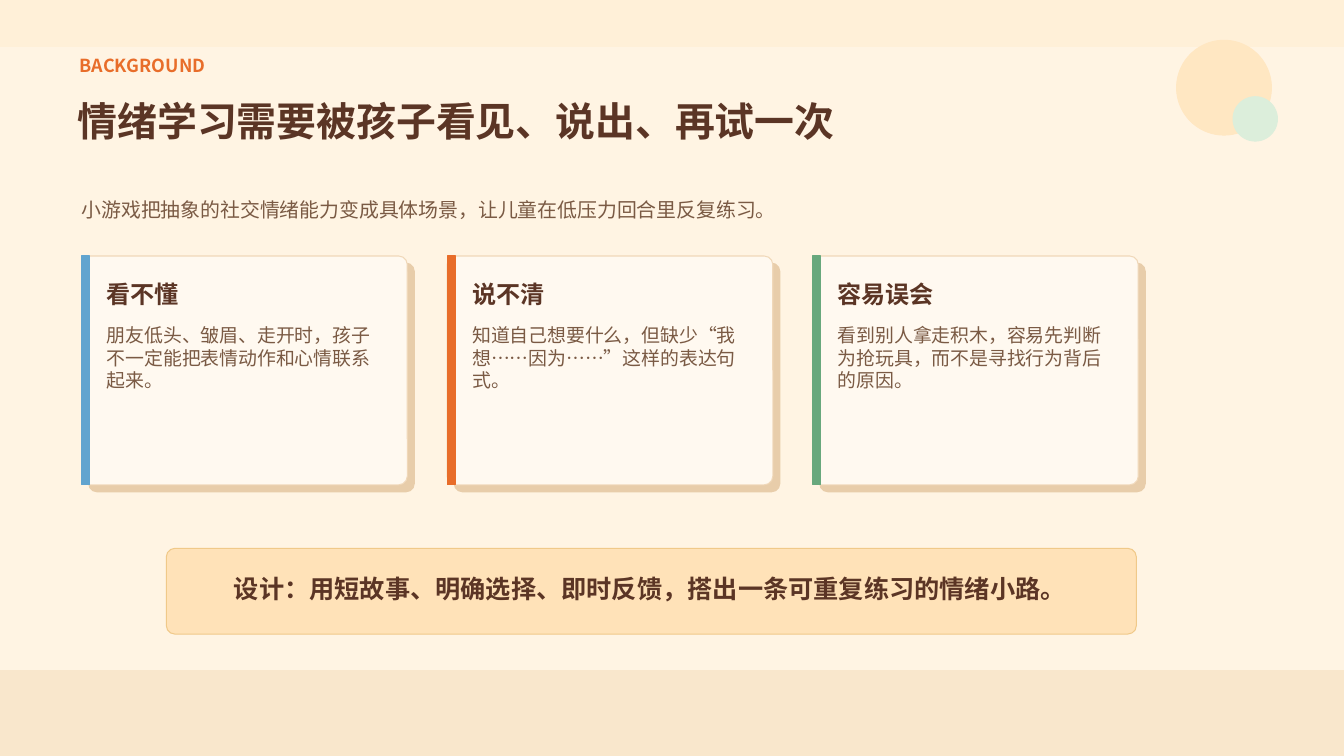
from dataclasses import dataclass

import pptx
import pptx.dml.color
import pptx.enum.shapes
import pptx.enum.text
import pptx.presentation
import pptx.shapes.autoshape
import pptx.slide
import pptx.util

Inches = pptx.util.Inches
RGBColor = pptx.dml.color.RGBColor
Shape = pptx.shapes.autoshape.Shape
Slide = pptx.slide.Slide
Kind = pptx.enum.shapes.MSO_SHAPE
Align = pptx.enum.text.PP_ALIGN

FONT = "Noto Sans CJK SC"
CREAM = RGBColor(0xFF, 0xF4, 0xE3)
TOP_BAND = RGBColor(0xFF, 0xF0, 0xD8)
BOTTOM_BAND = RGBColor(0xF9, 0xE7, 0xCC)
PEACH = RGBColor(0xFF, 0xE7, 0xC2)
MINT = RGBColor(0xDC, 0xEE, 0xDB)
BROWN = RGBColor(0x5B, 0x35, 0x25)
SOFT_BROWN = RGBColor(0x7A, 0x5A, 0x44)
CARD_SHADE = RGBColor(0xE8, 0xCD, 0xAA)
CARD_FILL = RGBColor(0xFF, 0xF9, 0xF0)
CARD_LINE = RGBColor(0xF0, 0xD8, 0xB9)
BLUE = RGBColor(0x61, 0xA4, 0xCF)
ORANGE = RGBColor(0xE8, 0x6D, 0x2A)
GREEN = RGBColor(0x68, 0xA8, 0x7D)
BANNER_FILL = RGBColor(0xFF, 0xE2, 0xB8)
BANNER_LINE = RGBColor(0xF0, 0xC9, 0x89)

CARD_LEFT, CARD_TOP, CARD_PITCH = 0.81, 2.54, 3.625
CARD_WIDTH, CARD_HEIGHT = 3.23, 2.27
CARD_RADIUS = 0.037
SHADE_OFFSET = 0.07


@dataclass(frozen=True)
class Box:
    """Left, top, width and height in inches."""
    left: float
    top: float
    width: float
    height: float

    def lengths(self) -> list[pptx.util.Length]:
        return [Inches(value) for value in (self.left, self.top, self.width, self.height)]


@dataclass(frozen=True)
class Card:
    heading: str
    body: str
    accent: RGBColor


@dataclass(frozen=True)
class TextStyle:
    size: float
    color: RGBColor
    bold: bool = False
    align: Align = Align.LEFT


CARDS = [
    Card("看不懂", "朋友低头、皱眉、走开时，孩子不一定能把表情动作和心情联系起来。", BLUE),
    Card("说不清", "知道自己想要什么，但缺少“我想……因为……”这样的表达句式。", ORANGE),
    Card("容易误会", "看到别人拿走积木，容易先判断为抢玩具，而不是寻找行为背后的原因。", GREEN),
]
LABEL = TextStyle(12.8, ORANGE, bold=True)
TITLE = TextStyle(28.5, BROWN, bold=True)
LEAD = TextStyle(14.2, SOFT_BROWN)
CARD_HEADING = TextStyle(17.2, BROWN, bold=True)
CARD_BODY = TextStyle(13.5, SOFT_BROWN)
BANNER = TextStyle(18, BROWN, bold=True, align=Align.CENTER)


def add_panel(slide: Slide, kind: Kind, box: Box, fill: RGBColor, line: RGBColor,
              line_width: float = 0, radius: float | None = None) -> None:
    shape = slide.shapes.add_shape(kind, *box.lengths())
    shape.shadow.inherit = False
    shape.fill.solid()
    shape.fill.fore_color.rgb = fill
    shape.line.color.rgb = line
    shape.line.width = pptx.util.Pt(line_width)
    if radius is not None:
        shape.adjustments[0] = radius


def write_text(shape: Shape, text: str, style: TextStyle) -> None:
    frame = shape.text_frame
    frame.text = text
    frame.word_wrap = True
    frame.auto_size = pptx.enum.text.MSO_AUTO_SIZE.NONE
    frame.vertical_anchor = pptx.enum.text.MSO_ANCHOR.TOP
    frame.margin_left = frame.margin_top = frame.margin_right = frame.margin_bottom = 0
    paragraph = frame.paragraphs[0]
    paragraph.alignment = style.align
    font = paragraph.runs[0].font
    font.name = FONT
    font.size = pptx.util.Pt(style.size)
    font.bold = style.bold
    font.color.rgb = style.color


def add_text(slide: Slide, box: Box, text: str, style: TextStyle) -> None:
    write_text(slide.shapes.add_textbox(*box.lengths()), text, style)


def set_title(slide: Slide, box: Box, text: str) -> None:
    title = slide.shapes.title
    title.left, title.top, title.width, title.height = box.lengths()
    write_text(title, text, TITLE)


def add_backdrop(slide: Slide) -> None:
    slide.background.fill.solid()
    slide.background.fill.fore_color.rgb = CREAM
    add_panel(slide, Kind.RECTANGLE, Box(0, 0, 13.33, 0.46), TOP_BAND, TOP_BAND)
    add_panel(slide, Kind.RECTANGLE, Box(0, 6.65, 13.33, 0.85), BOTTOM_BAND, BOTTOM_BAND)
    add_panel(slide, Kind.OVAL, Box(11.67, 0.4, 0.94, 0.94), PEACH, PEACH, 0.75)
    add_panel(slide, Kind.OVAL, Box(12.23, 0.96, 0.44, 0.44), MINT, MINT, 0.75)


def add_card(slide: Slide, left: float, card: Card) -> None:
    shade = Box(left + SHADE_OFFSET, CARD_TOP + SHADE_OFFSET, CARD_WIDTH, CARD_HEIGHT)
    face = Box(left, CARD_TOP, CARD_WIDTH, CARD_HEIGHT)
    accent = Box(left, CARD_TOP, 0.08, CARD_HEIGHT)
    add_panel(slide, Kind.ROUNDED_RECTANGLE, shade, CARD_SHADE, CARD_SHADE, radius=CARD_RADIUS)
    add_panel(slide, Kind.ROUNDED_RECTANGLE, face, CARD_FILL, CARD_LINE, 0.75, CARD_RADIUS)
    add_panel(slide, Kind.RECTANGLE, accent, card.accent, card.accent)
    add_text(slide, Box(left + 0.25, 2.77, 2.79, 0.33), card.heading, CARD_HEADING)
    add_text(slide, Box(left + 0.25, 3.21, 2.79, 1.42), card.body, CARD_BODY)


def main() -> None:
    presentation = pptx.Presentation()
    presentation.slide_width = Inches(13.33)
    presentation.slide_height = Inches(7.5)
    title_only = presentation.slide_layouts[5]
    slide = presentation.slides.add_slide(title_only)

    add_backdrop(slide)
    add_text(slide, Box(0.79, 0.54, 6.56, 0.29), "BACKGROUND", LABEL)
    set_title(slide, Box(0.77, 0.96, 8.85, 0.94), "情绪学习需要被孩子看见、说出、再试一次")
    add_text(slide, Box(0.81, 1.96, 7.92, 0.48),
             "小游戏把抽象的社交情绪能力变成具体场景，让儿童在低压力回合里反复练习。", LEAD)
    for index, card in enumerate(CARDS):
        add_card(slide, CARD_LEFT + index * CARD_PITCH, card)
    add_panel(slide, Kind.ROUNDED_RECTANGLE, Box(1.65, 5.44, 9.62, 0.85),
              BANNER_FILL, BANNER_LINE, 0.75, 0.098)
    add_text(slide, Box(2.06, 5.69, 8.77, 0.35),
             "设计：用短故事、明确选择、即时反馈，搭出一条可重复练习的情绪小路。", BANNER)
    presentation.save("out.pptx")


if __name__ == "__main__":
    main()
